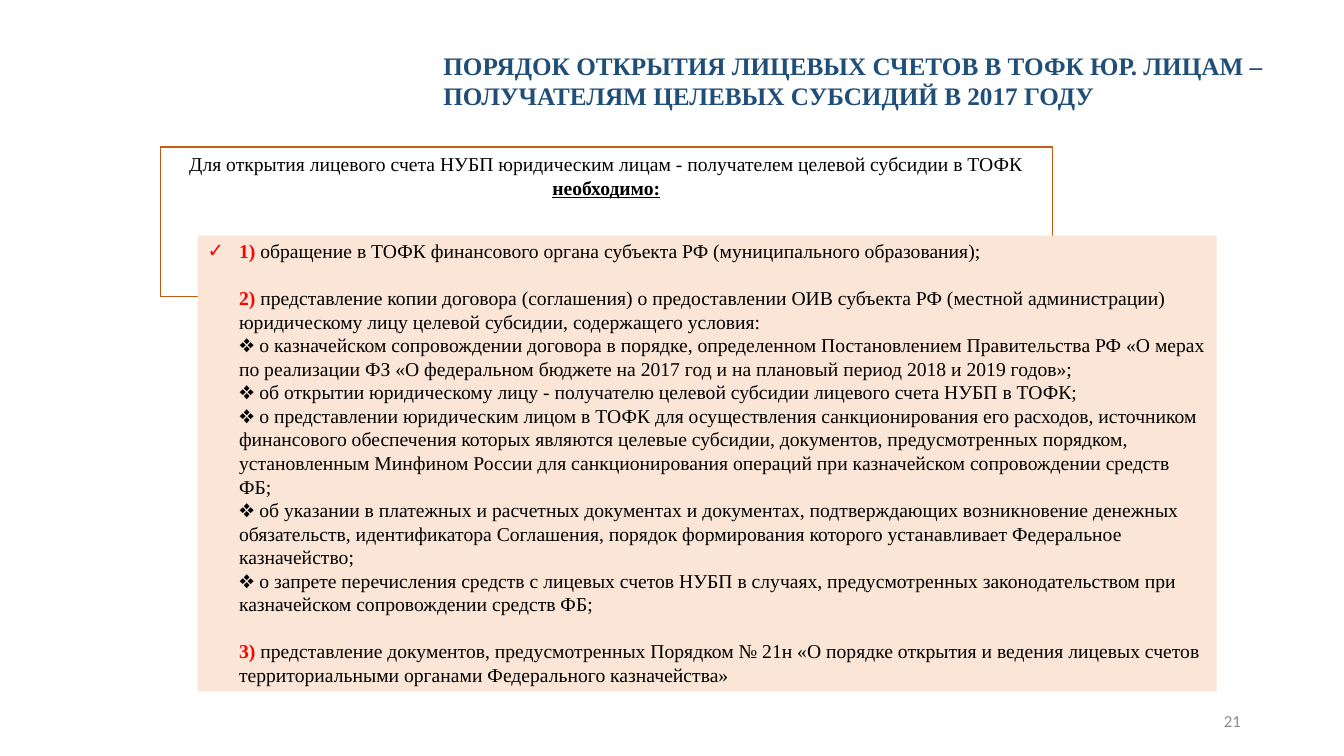
import pptx
import pptx.util
import pptx.dml.color
import pptx.enum.text
import pptx.enum.shapes
import lxml.etree
from pptx.util import Cm, Pt
from pptx.enum.text import PP_ALIGN, MSO_ANCHOR, MSO_AUTO_SIZE


def color(value):
    return pptx.dml.color.RGBColor.from_string(value)


def style(para, size, value, name="Times New Roman"):
    para.font.name = name
    para.font.size = Pt(size)
    para.font.color.rgb = color(value)


deck = pptx.Presentation()
deck.slide_width, deck.slide_height = Cm(33.87), Cm(19.05)
page = deck.slides.add_slide(deck.slide_layouts[1])
title, conditions = page.placeholders

frame = page.shapes.add_shape(
    pptx.enum.shapes.MSO_SHAPE.RECTANGLE, Cm(4.04), Cm(3.71), Cm(22.48), Cm(3.76))
title.element.addprevious(frame.element)
frame.shadow.inherit = False
frame.fill.solid()
frame.fill.fore_color.rgb = color("FFFFFF")
frame.line.color.rgb = color("C55A11")
frame.line.width = Pt(1)
frame.text_frame.vertical_anchor = MSO_ANCHOR.TOP
para = frame.text_frame.paragraphs[0]
para.alignment = PP_ALIGN.CENTER
style(para, 14, "000000")
para.add_run().text = "Для открытия лицевого счета НУБП юридическим лицам - получателем целевой субсидии в ТОФК "
span = para.add_run()
span.text = "необходимо:"
span.font.bold = span.font.underline = True
for span in para.runs:
    span.font.color.rgb = color("000000")

title.left, title.top, title.width, title.height = Cm(10.92), Cm(1.14), Cm(22.45), Cm(1.8)
title.text_frame.auto_size = MSO_AUTO_SIZE.NONE
title.text_frame.vertical_anchor = MSO_ANCHOR.TOP
para = title.text_frame.paragraphs[0]
para.text = "ПОРЯДОК ОТКРЫТИЯ ЛИЦЕВЫХ СЧЕТОВ В ТОФК ЮР. ЛИЦАМ – ПОЛУЧАТЕЛЯМ ЦЕЛЕВЫХ СУБСИДИЙ В 2017 ГОДУ"
para.alignment = PP_ALIGN.LEFT
style(para, 18, "1F4E79")
para.font.bold = True

steps = [
    ("1) ", "обращение в ТОФК финансового органа субъекта РФ (муниципального образования);"),
    ("2) ", "представление копии договора (соглашения) о предоставлении ОИВ субъекта РФ (местной администрации) юридическому лицу целевой субсидии, содержащего условия:"),
    ("❖ ", "о казначейском сопровождении договора в порядке, определенном Постановлением Правительства РФ «О мерах по реализации ФЗ «О федеральном бюджете на 2017 год и на плановый период 2018 и 2019 годов»;"),
    ("❖ ", "об открытии юридическому лицу - получателю целевой субсидии лицевого счета НУБП в ТОФК;"),
    ("❖ ", "о представлении юридическим лицом в ТОФК для осуществления санкционирования его расходов, источником финансового обеспечения которых являются целевые субсидии, документов, предусмотренных порядком, установленным Минфином России для санкционирования операций при казначейском сопровождении средств ФБ;"),
    ("❖ ", "об указании в платежных и расчетных документах и документах, подтверждающих возникновение денежных обязательств, идентификатора Соглашения, порядок формирования которого устанавливает Федеральное казначейство;"),
    ("❖ ", "о запрете перечисления средств с лицевых счетов НУБП в случаях, предусмотренных законодательством при казначейском сопровождении средств ФБ;"),
    ("3) ", "представление документов, предусмотренных Порядком № 21н «О порядке открытия и ведения лицевых счетов территориальными органами Федерального казначейства»"),
]
conditions.left, conditions.top, conditions.width, conditions.height = Cm(4.98), Cm(5.94), Cm(25.68), Cm(11.48)
conditions.fill.solid()
conditions.fill.fore_color.rgb = color("FBE5D6")
block = conditions.text_frame
block.auto_size = MSO_AUTO_SIZE.NONE
block.vertical_anchor = MSO_ANCHOR.BOTTOM
for index, (mark, wording) in enumerate(steps):
    para = block.paragraphs[0] if index == 0 else block.add_paragraph()
    numbered = mark != "❖ "
    properties = para._p.get_or_add_pPr()
    properties.set("marL", str(Cm(0.79)))
    properties.set("indent", str(Cm(-0.79) if index == 0 else 0))
    bullet = lxml.etree.SubElement(
        properties, pptx.oxml.ns.qn("a:buChar" if index == 0 else "a:buNone"))
    if index == 0:
        bullet.set("char", "✓")
    para.space_before = Pt(16.8 if numbered and index else 0)
    style(para, 14, "000000")
    span = para.add_run()
    span.text = mark
    if numbered:
        span.font.bold = True
        span.font.color.rgb = color("FF0000")
    para.add_run().text = wording

number = page.shapes.add_textbox(Cm(23.98), Cm(17.65), Cm(7.54), Cm(1.02))
number.text_frame.word_wrap = True
number.text_frame.vertical_anchor = MSO_ANCHOR.MIDDLE
para = number.text_frame.paragraphs[0]
para.text = "21"
para.alignment = PP_ALIGN.RIGHT
style(para, 12, "8C8C8C", "Calibri")

deck.save("out.pptx")
